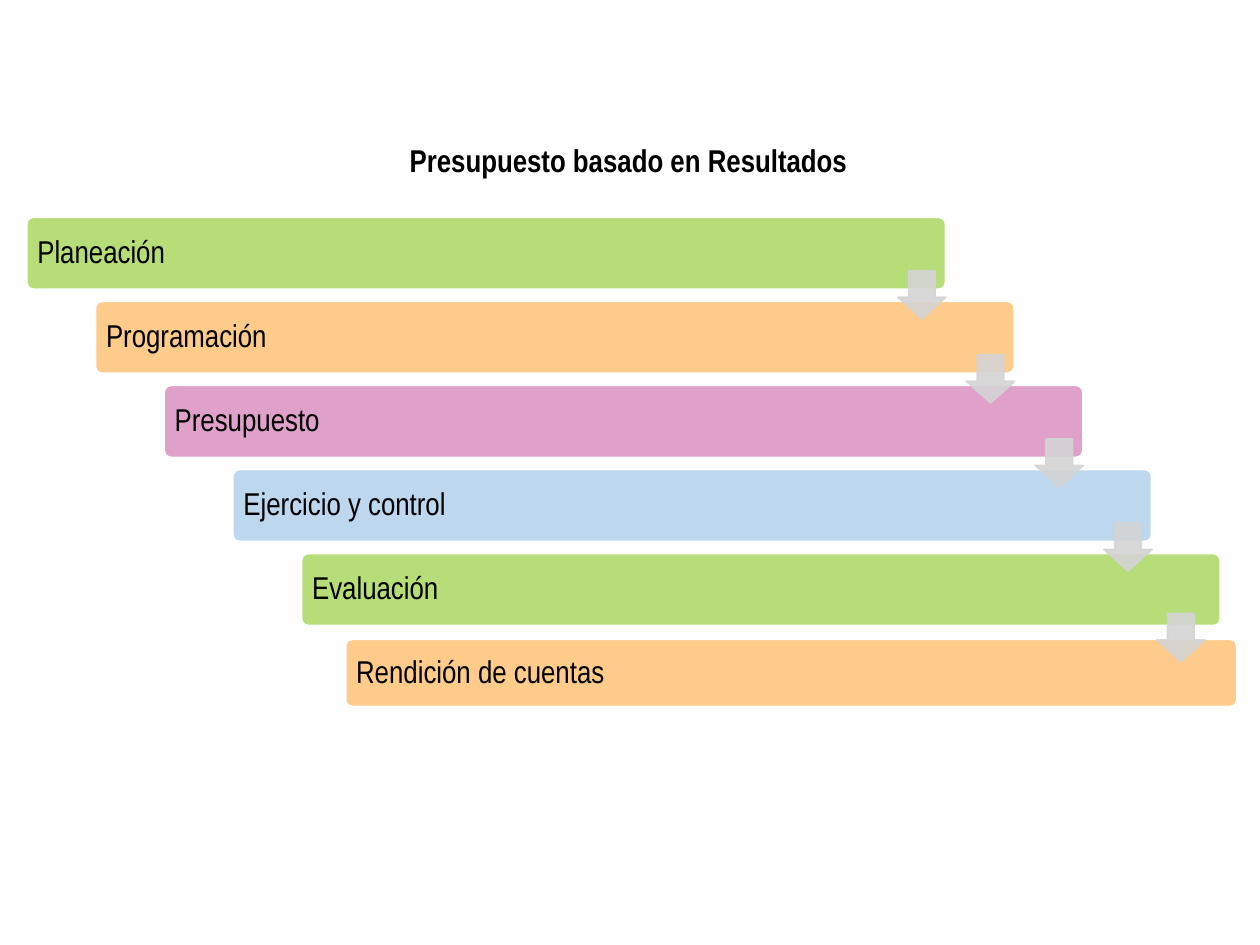
"""Build the slide on the cascade of results-based budgeting stages."""
from lxml import etree
from pptx import Presentation
from pptx.dml.color import RGBColor
from pptx.enum.shapes import MSO_SHAPE
from pptx.enum.text import MSO_ANCHOR, MSO_AUTO_SIZE, PP_ALIGN
from pptx.oxml.ns import qn
from pptx.util import Cm, Pt

BAR, ARROW = MSO_SHAPE.ROUNDED_RECTANGLE, MSO_SHAPE.DOWN_ARROW
TOP, MIDDLE = MSO_ANCHOR.TOP, MSO_ANCHOR.MIDDLE
LEFT, CENTER = PP_ALIGN.LEFT, PP_ALIGN.CENTER
GROW = MSO_AUTO_SIZE.SHAPE_TO_FIT_TEXT

COLORS = {"green": "B7DD79", "orange": "FECB8B", "pink": "DFA0C9",
          "blue": "BDD7EE", "gray": "D4D4D4", "white": "FFFFFF", "black": "000000"}
TITLE = "Presupuesto basado en Resultados"
STAGES = [("Planeación", "green"), ("Programación", "orange"),
          ("Presupuesto", "pink"), ("Ejercicio y control", "blue"),
          ("Evaluación", "green")]
LAST_STAGE = ("Rendición de cuentas", "orange")

TITLE_BOX = (2.74, 2.72, 19.86, 1.02)
FIRST_LEFT, FIRST_TOP, BAR_WIDTH, BAR_HEIGHT = 0.53, 4.37, 18.54, 1.47
STEP_X, STEP_Y = 1.385, 1.695
ARROW_SIZE, ARROW_DROP = 0.97, 1.09
LAST_BAR_BOX = (6.96, 12.88, 17.98, 1.37)
LAST_ARROW_BOX = (23.32, 12.37, ARROW_SIZE, ARROW_SIZE)

FONT = {"name": "Arial Narrow", "size": Pt(18)}
BAR_FRAME = {"word_wrap": True, "vertical_anchor": MIDDLE,
             "margin_left": Cm(0.18), "margin_right": Cm(0.18),
             "margin_top": Cm(0.18), "margin_bottom": Cm(0.18)}
TITLE_FRAME = {"word_wrap": True, "vertical_anchor": TOP, "auto_size": GROW}


def rgb(color):
    return RGBColor.from_string(COLORS[color])


def apply(target, values):
    for name, value in values.items():
        setattr(target, name, value)


def write(shape, text, frame_format, paragraph_format, bold):
    frame = shape.text_frame
    frame.text = text
    apply(frame, frame_format)
    paragraph = frame.paragraphs[0]
    apply(paragraph, paragraph_format)
    font = paragraph.runs[0].font
    apply(font, {**FONT, "bold": bold})
    font.color.rgb = rgb("black")


def add_form(shapes, kind, box, fill, line, line_width, adjustments):
    form = shapes.add_shape(kind, *map(Cm, box))
    form.shadow.inherit = False
    form.fill.solid()
    form.fill.fore_color.rgb = rgb(fill)
    form.line.color.rgb = rgb(line)
    form.line.width = Pt(line_width)
    for index, value in enumerate(adjustments):
        form.adjustments[index] = value
    return form


def add_bar(shapes, box, stage, color):
    bar = add_form(shapes, BAR, box, color, "white", 1.5, [0.1])
    write(bar, stage, BAR_FRAME, {"alignment": LEFT, "line_spacing": 0.9}, False)


def add_arrow(shapes, box):
    arrow = add_form(shapes, ARROW, box, "gray", "gray", 1, [0.55, 0.45])
    for color in arrow._element.spPr.findall(".//" + qn("a:srgbClr")):
        etree.SubElement(color, qn("a:alpha")).set("val", "90000")


def main():
    presentation = Presentation()
    presentation.slide_width, presentation.slide_height = Cm(25.4), Cm(19.05)
    slide = presentation.slides.add_slide(presentation.slide_layouts[5])

    title = slide.shapes.title
    apply(title, dict(zip(("left", "top", "width", "height"), map(Cm, TITLE_BOX))))
    write(title, TITLE, TITLE_FRAME, {"alignment": CENTER}, True)

    cascade = slide.shapes.add_group_shape().shapes
    arrow_boxes = []
    for step, (stage, color) in enumerate(STAGES):
        left, top = FIRST_LEFT + step * STEP_X, FIRST_TOP + step * STEP_Y
        add_bar(cascade, (left, top, BAR_WIDTH, BAR_HEIGHT), stage, color)
        arrow_boxes.append((left + BAR_WIDTH - ARROW_SIZE, top + ARROW_DROP,
                            ARROW_SIZE, ARROW_SIZE))
    add_bar(cascade, LAST_BAR_BOX, *LAST_STAGE)
    for box in arrow_boxes[:-1] + [LAST_ARROW_BOX]:
        add_arrow(cascade, box)

    presentation.save("out.pptx")


if __name__ == "__main__":
    main()
